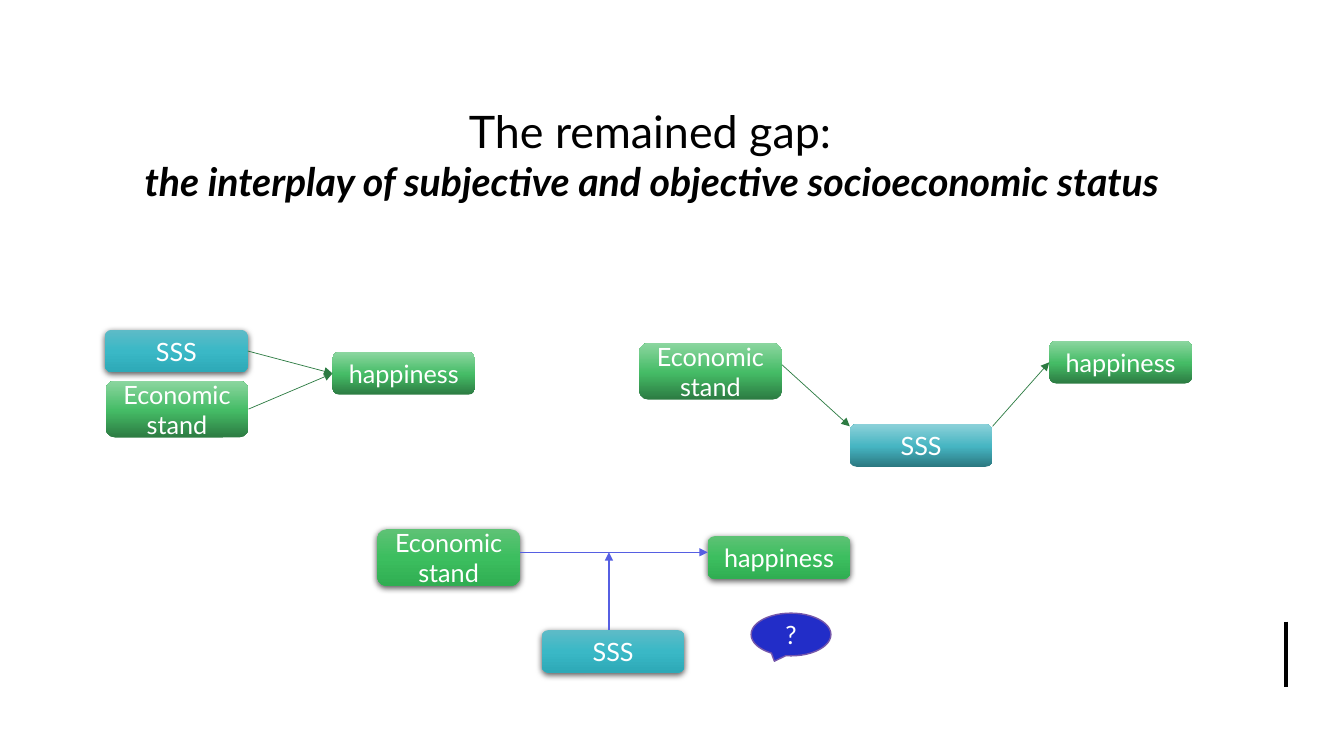
from lxml import etree
from pptx import Presentation
from pptx.dml.color import RGBColor
from pptx.enum.shapes import MSO_CONNECTOR, MSO_SHAPE
from pptx.enum.text import MSO_ANCHOR, PP_ALIGN
from pptx.oxml import parse_xml
from pptx.oxml.ns import nsdecls, qn
from pptx.util import Pt

STRAIGHT = MSO_CONNECTOR.STRAIGHT
ROUNDED = MSO_SHAPE.ROUNDED_RECTANGLE
CALLOUT = MSO_SHAPE.OVAL_CALLOUT
MIDDLE = MSO_ANCHOR.MIDDLE
CENTER = PP_ALIGN.CENTER
LEFT_SIDE, RIGHT_SIDE = 1, 3

FONT = "Lato"
BOX_W, LOW, TALL = 102, 30.5, 40.5
DARK_GREEN, VIOLET = "2C7B42", "565FE2"
DEEP_GREEN = ([(0, "2C7B42"), (48, "45BC66"), (100, "8CD6A0")], 270, False)
DEEP_TEAL = ([(0, "2B7881"), (48, "46B5C2"), (100, "8CD1D9")], 270, False)
SOFT_GREEN = ([(0, "5EC275"), (50, "3CBE5F"), (100, "30AE52")], 90, True)
SOFT_TEAL = ([(0, "5EBBC7"), (50, "3AB8C6"), (100, "2DA9B7")], 90, True)


def color(hex_code):
    return RGBColor.from_string(hex_code)


def set_label(sp, text):
    tf = sp.text_frame
    tf.word_wrap = True
    tf.vertical_anchor = MIDDLE
    p = tf.paragraphs[0]
    p.text = text
    p.alignment = CENTER
    p.font.name = FONT
    p.font.size = Pt(18)
    p.font.color.rgb = color("FFFFFF")


def add_box(shapes, text, x, y, h, style):
    stops, angle, shadow = style
    sp = shapes.add_shape(ROUNDED, Pt(x), Pt(y), Pt(BOX_W), Pt(h))
    sp.shadow.inherit = False
    sp.line.fill.background()
    props = sp._element.spPr
    gs = "".join(f'<a:gs pos="{pos * 1000}"><a:srgbClr val="{c}"/></a:gs>' for pos, c in stops)
    props.find(qn("a:prstGeom")).addnext(parse_xml(
        f'<a:gradFill {nsdecls("a")} rotWithShape="1"><a:gsLst>{gs}</a:gsLst>'
        f'<a:lin ang="{angle * 60000}" scaled="0"/></a:gradFill>'))
    if shadow:
        props.find(qn("a:effectLst")).append(parse_xml(
            f'<a:outerShdw {nsdecls("a")} blurRad="{Pt(4.5)}" dist="{Pt(1.5)}" dir="5400000" '
            'rotWithShape="0"><a:srgbClr val="000000"><a:alpha val="63000"/></a:srgbClr></a:outerShdw>'))
    set_label(sp, text)
    return sp


def add_line(shapes, start, end, hex_code, width, arrow=True):
    points = [Pt(v) for v in (*start, *end)]
    line = shapes.add_connector(STRAIGHT, *points)
    line.line.color.rgb = color(hex_code)
    line.line.width = Pt(width)
    if arrow:
        etree.SubElement(line.line._get_or_add_ln(), qn("a:tailEnd"), type="triangle")
    etree.SubElement(line._element.spPr, qn("a:effectLst"))
    return line


def add_title(s, x, y, w, h):
    sp = s.shapes.add_textbox(Pt(x), Pt(y), Pt(w), Pt(h))
    tf = sp.text_frame
    tf.word_wrap = True
    tf.vertical_anchor = MIDDLE
    p = tf.paragraphs[0]
    p.alignment = CENTER
    p.font.name = FONT
    r = p.add_run()
    r.text = "The remained gap: "
    r.font.size = Pt(32)
    p.add_line_break()
    subtitle = p.add_run()
    subtitle.text = "the interplay of subjective and objective socioeconomic status "
    subtitle.font.size = Pt(28)
    subtitle.font.bold = subtitle.font.italic = True
    for r in p.runs:
        r.font.name = FONT
        r.font.color.rgb = color("000000")


def add_parallel_model(s, x, y):
    shapes = s.shapes.add_group_shape().shapes
    sss = add_box(shapes, "SSS", x, y, LOW, SOFT_TEAL)
    happiness = add_box(shapes, "happiness", x + 162.5, y + 16, LOW, DEEP_GREEN)
    economic = add_box(shapes, "Economic stand", x + 0.5, y + 36.5, TALL, DEEP_GREEN)
    for cause in (sss, economic):
        line = add_line(shapes, (x + BOX_W, y + 20), (x + 162.5, y + 31), DARK_GREEN, 0.5)
        line.begin_connect(cause, RIGHT_SIDE)
        line.end_connect(happiness, LEFT_SIDE)


def add_mediation_model(s, x, y):
    shapes = s.shapes.add_group_shape().shapes
    add_box(shapes, "SSS", x + 150.5, y + 59.5, LOW, DEEP_TEAL)
    add_box(shapes, "Economic stand", x, y + 1.5, TALL, DEEP_GREEN)
    happiness = add_box(shapes, "happiness", x + 293, y, LOW, DEEP_GREEN)
    add_line(shapes, (x + BOX_W, y + 17), (x + 150.5, y + 61), DARK_GREEN, 0.5)
    line = add_line(shapes, (x + 252.5, y + 61), (x + 293, y + 15), DARK_GREEN, 0.5)
    line.end_connect(happiness, LEFT_SIDE)


def add_moderation_model(s, x, y):
    shapes = s.shapes.add_group_shape().shapes
    add_box(shapes, "Economic stand", x, y, TALL, SOFT_GREEN)
    add_box(shapes, "happiness", x + 236, y + 5, LOW, SOFT_GREEN)
    add_box(shapes, "SSS", x + 117.5, y + 72, LOW, SOFT_TEAL)
    add_line(shapes, (x + BOX_W, y + 16.5), (x + 236, y + 16.5), VIOLET, 1)
    add_line(shapes, (x + 165.5, y + 72), (x + 165.5, y + 16.5), VIOLET, 1)


def add_question(s, x, y, w, h):
    sp = s.shapes.add_shape(CALLOUT, Pt(x), Pt(y), Pt(w), Pt(h))
    sp.shadow.inherit = False
    sp.fill.solid()
    sp.fill.fore_color.rgb = color("222DC8")
    sp.line.color.rgb = color("7557AB")
    sp.line.width = Pt(1)
    set_label(sp, "?")


def main():
    prs = Presentation()
    prs.slide_width, prs.slide_height = Pt(960), Pt(540)
    s = prs.slides.add_slide(prs.slide_layouts[6])
    add_line(s.shapes, (918.7, 444), (918.7, 491), "000000", 3, arrow=False)
    add_title(s, 60, 40, 817, 140)
    add_parallel_model(s, 75, 235.5)
    add_mediation_model(s, 456.5, 243.5)
    add_moderation_model(s, 269.5, 378)
    add_question(s, 536.5, 438, 57, 30.5)
    prs.save("out.pptx")


if __name__ == "__main__":
    main()
